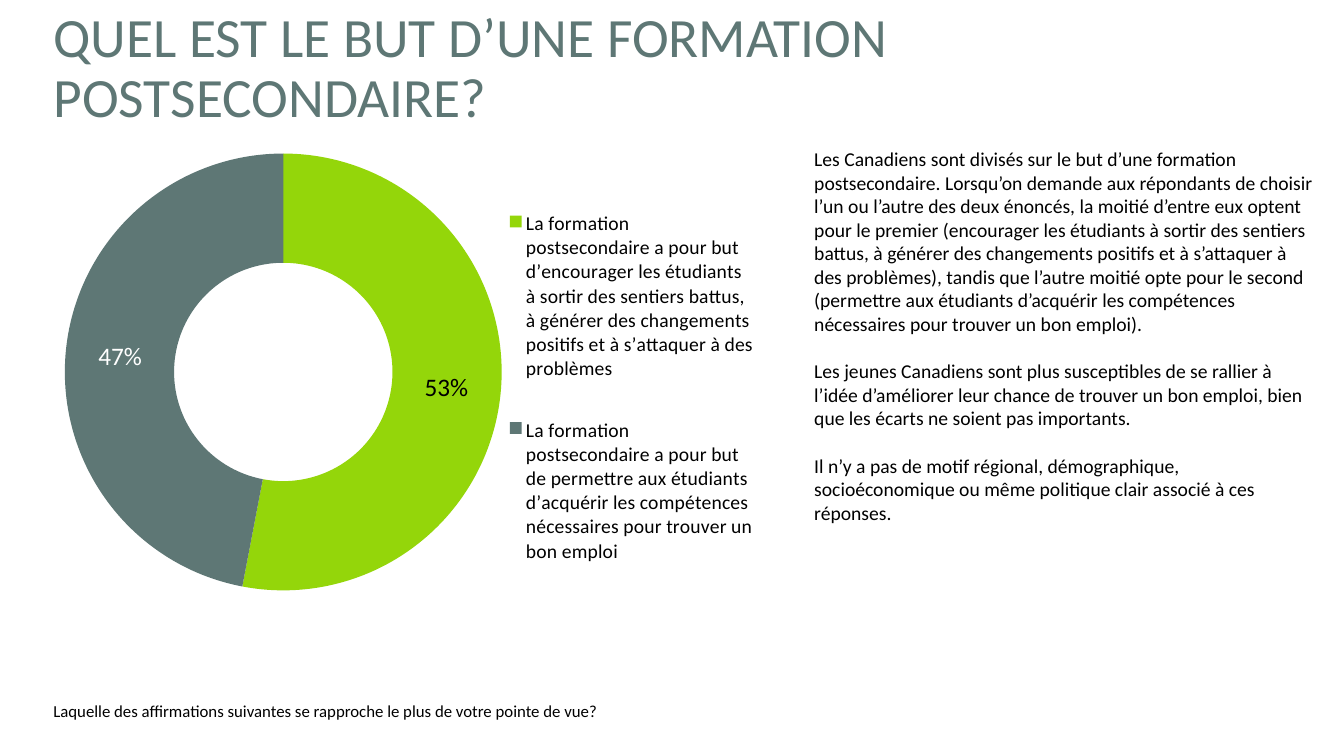
"""Build a slide with a doughnut chart on the purpose of postsecondary education."""
from lxml import etree
from pptx import Presentation
from pptx.chart.data import CategoryChartData
from pptx.dml.color import RGBColor
from pptx.enum import chart as ch, text as tx
from pptx.oxml import ns
from pptx.util import Pt

FONT = "Calibri"
BLACK, WHITE, SLATE, LIME = "000000", "FFFFFF", "5E7775", "94D60A"

TITLE = "QUEL EST LE BUT D’UNE FORMATION POSTSECONDAIRE?"
QUESTION = "Laquelle des affirmations suivantes se rapproche le plus de votre pointe de vue?"
ANSWERS = [
    ("La formation postsecondaire a pour but d’encourager les étudiants à sortir des "
     "sentiers battus, à générer des changements positifs et à s’attaquer à des problèmes",
     53, LIME),
    ("La formation postsecondaire a pour but de permettre aux étudiants d’acquérir les "
     "compétences nécessaires pour trouver un bon emploi", 47, SLATE),
]
FINDINGS = [
    "Les Canadiens sont divisés sur le but d’une formation postsecondaire. Lorsqu’on demande "
    "aux répondants de choisir l’un ou l’autre des deux énoncés, la moitié d’entre eux optent "
    "pour le premier (encourager les étudiants à sortir des sentiers battus, à générer des "
    "changements positifs et à s’attaquer à des problèmes), tandis que l’autre moitié opte "
    "pour le second (permettre aux étudiants d’acquérir les compétences nécessaires pour "
    "trouver un bon emploi).",
    "Les jeunes Canadiens sont plus susceptibles de se rallier à l’idée d’améliorer leur "
    "chance de trouver un bon emploi, bien que les écarts ne soient pas importants.",
    "Il n’y a pas de motif régional, démographique, socioéconomique ou même politique clair "
    "associé à ces réponses.",
]

TITLE_BOX = (31, 13, 916, 73.4)
CHART_BOX = (36, 80, 512, 371.5)
FINDINGS_BOX = (574.5, 101.5, 373, 330)
QUESTION_BOX = (31, 482.4, 718, 52.6)
RING_LAYOUT = (0.02, 0.08, 0.61, 0.84)
LEGEND_LAYOUT = (0.65, 0.12, 0.34, 0.82)


def color(hex_string):
    return RGBColor.from_string(hex_string)


def style(font, size, hex_string=BLACK):
    font.name, font.size = FONT, Pt(size)
    font.color.rgb = color(hex_string)


def write(box, paragraphs, size, hex_string=BLACK, anchor=tx.MSO_ANCHOR.MIDDLE,
          spacing=0.9, gap=0):
    frame = box.text_frame
    frame.word_wrap = True
    frame.auto_size = tx.MSO_AUTO_SIZE.NONE
    frame.vertical_anchor = anchor
    frame.text = "\n".join(paragraphs)
    for index, paragraph in enumerate(frame.paragraphs):
        paragraph.alignment = tx.PP_ALIGN.LEFT
        paragraph.line_spacing = spacing
        paragraph.space_before = Pt(gap if index else 0)
        style(paragraph.font, size, hex_string)


def set_layout(parent, position, fractions, inner=False):
    for old in parent.findall(ns.qn("c:layout")):
        parent.remove(old)
    layout = etree.Element(ns.qn("c:layout"))
    manual = etree.SubElement(layout, ns.qn("c:manualLayout"))
    settings = [("layoutTarget", "inner")] if inner else []
    settings += [("xMode", "edge"), ("yMode", "edge"), *zip("xywh", fractions)]
    for tag, value in settings:
        etree.SubElement(manual, ns.qn("c:" + tag)).set("val", str(value))
    parent.insert(position, layout)


def add_doughnut(slide):
    data = CategoryChartData()
    data.categories = [answer for answer, _, _ in ANSWERS]
    data.add_series("Series 1", [share for _, share, _ in ANSWERS])
    frame = slide.shapes.add_chart(ch.XL_CHART_TYPE.DOUGHNUT, *map(Pt, CHART_BOX), data)
    doughnut = frame.chart
    doughnut.has_title = False
    style(doughnut.font, 18)
    doughnut.has_legend = True
    legend = doughnut.legend
    legend.position = ch.XL_LEGEND_POSITION.RIGHT
    legend.include_in_layout = False
    style(legend.font, 14)
    plot = doughnut.plots[0]
    plot.vary_by_categories = True
    shares = plot.series[0]
    for index, (_, _, fill) in enumerate(ANSWERS):
        slice_format = shares.points[index].format
        slice_format.fill.solid()
        slice_format.fill.fore_color.rgb = color(fill)
        slice_format.line.fill.background()
    labels = shares.data_labels
    labels.show_value = False
    labels.show_percentage = True
    labels.number_format = "0%"
    labels.number_format_is_linked = False
    style(labels.font, 18, WHITE)
    style(shares.points[0].data_label.font, 18)
    for tag, shown in (("showVal", "0"), ("showPercent", "1")):
        for flag in doughnut.element.findall(f".//{ns.qn('c:dLbl')}/{ns.qn('c:' + tag)}"):
            flag.set("val", shown)
    set_layout(doughnut.element.find(f".//{ns.qn('c:plotArea')}"), 0, RING_LAYOUT, inner=True)
    set_layout(doughnut.element.find(f".//{ns.qn('c:legend')}"), 1, LEGEND_LAYOUT)


def main():
    deck = Presentation()
    deck.slide_width, deck.slide_height = Pt(960), Pt(540)
    slide = deck.slides.add_slide(deck.slide_layouts[5])
    title = slide.shapes.title
    title.left, title.top, title.width, title.height = map(Pt, TITLE_BOX)
    write(title, [TITLE], 39.6, SLATE)
    question = slide.shapes.add_textbox(*map(Pt, QUESTION_BOX))
    write(question, [QUESTION], 12)
    add_doughnut(slide)
    findings = slide.shapes.add_textbox(*map(Pt, FINDINGS_BOX))
    write(findings, FINDINGS, 14, anchor=tx.MSO_ANCHOR.TOP, spacing=1.0, gap=17)
    deck.save("out.pptx")


if __name__ == "__main__":
    main()
